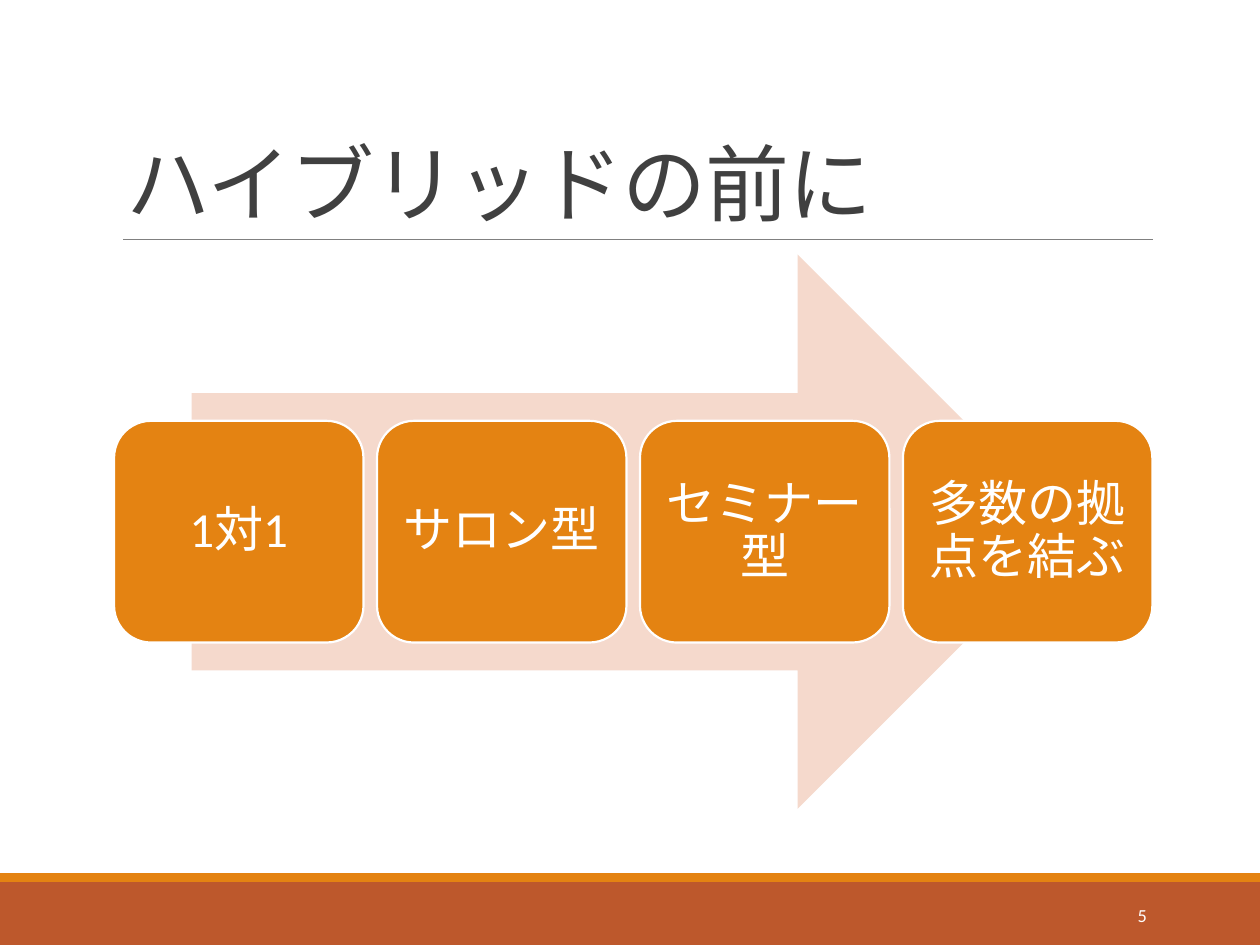
from pptx import Presentation
from pptx.dml.color import RGBColor
from pptx.enum.lang import MSO_LANGUAGE_ID as LANG
from pptx.enum.shapes import MSO_CONNECTOR, MSO_SHAPE as SHAPE
from pptx.enum.text import MSO_ANCHOR as ANCHOR, MSO_AUTO_SIZE, PP_ALIGN as ALIGN
from pptx.oxml.ns import qn
from pptx.util import Inches, Pt
from lxml import etree

WHITE = RGBColor(0xFF, 0xFF, 0xFF)
DARK = RGBColor(0x40, 0x40, 0x40)
GRAY = RGBColor(0x80, 0x80, 0x80)
ORANGE = RGBColor(0xE4, 0x83, 0x12)
RUST = RGBColor(0xBD, 0x58, 0x2C)
PALE = RGBColor(0xF5, 0xD9, 0xCC)

COLS, ROWS = 100, 75
STAGES = ["1対1", "サロン型", "セミナー型", "多数の拠点を結ぶ"]


def write(sp, text, size, color=WHITE, align=ALIGN.LEFT, anchor=ANCHOR.MIDDLE,
          leading=1.0, inset=None, spacing=None, font="Calibri"):
    tf = sp.text_frame
    tf.word_wrap = True
    tf.auto_size = MSO_AUTO_SIZE.NONE
    tf.vertical_anchor = anchor
    if inset is not None:
        tf.margin_left = tf.margin_right = Inches(inset)
        tf.margin_top = tf.margin_bottom = Inches(inset)
    p = tf.paragraphs[0]
    p.alignment = align
    p.line_spacing = leading
    r = p.add_run()
    r.text = text
    r.font.name = font
    r.font.size = Pt(size)
    r.font.color.rgb = color
    r.font.language_id = LANG.JAPANESE
    if spacing is not None:
        r.font._element.set("spc", str(int(spacing * 100)))


class Deck:
    """Draws styled elements on the current slide, placed by grid columns and rows."""

    def __init__(self):
        self.prs = Presentation()
        self.prs.slide_width, self.prs.slide_height = Inches(10), Inches(7.5)
        self.s = self.prs.slides.add_slide(self.prs.slide_layouts[5])

    def place(self, col, row, width, height):
        x, y = self.prs.slide_width / COLS, self.prs.slide_height / ROWS
        return int(col * x), int(row * y), int(width * x), int(height * y)

    def title(self, text, *box, **style):
        sp = self.s.shapes.title
        sp.left, sp.top, sp.width, sp.height = self.place(*box)
        write(sp, text, **style)

    def shape(self, kind, *box, fill, line=None):
        sp = self.s.shapes.add_shape(kind, *self.place(*box))
        sp.shadow.inherit = False
        sp.fill.solid()
        sp.fill.fore_color.rgb = fill
        if line is None:
            sp.line.fill.background()
        else:
            sp.line.color.rgb = line
            sp.line.width = Pt(1.25)
        return sp

    def rule(self, col, row, width, color):
        x, y, w, _ = self.place(col, row, width, 0)
        ln = self.s.shapes.add_connector(MSO_CONNECTOR.STRAIGHT, x, y, x + w, y)
        ln.line.color.rgb = color
        ln.line.width = Pt(0.5)
        etree.SubElement(ln._element.spPr, qn("a:effectLst"))

    def text(self, text, *box, **style):
        write(self.s.shapes.add_textbox(*self.place(*box)), text, **style)


def main():
    deck = Deck()
    deck.shape(SHAPE.RECTANGLE, 0, 70, COLS, 5, fill=RUST)
    deck.shape(SHAPE.RECTANGLE, 0, 69.3, COLS, 0.7, fill=ORANGE)
    deck.rule(9.8, 19, 81.7, GRAY)
    deck.title("ハイブリッドの前に", 9, 3.1, 82.5, 15.9, size=48, color=DARK,
               anchor=ANCHOR.BOTTOM, leading=0.85, spacing=-0.5)
    deck.shape(SHAPE.RIGHT_ARROW, 15.2, 20.2, 70.1, 44, fill=PALE)
    for i, stage in enumerate(STAGES):
        box = deck.shape(SHAPE.ROUNDED_RECTANGLE, 9.05 + i * 20.87, 33.4, 19.8, 17.6,
                         fill=ORANGE, line=WHITE)
        write(box, stage, size=28, align=ALIGN.CENTER, leading=0.9, inset=0.12)
    deck.text("5", 81.2, 70.6, 10.8, 4, size=10.5, align=ALIGN.RIGHT)
    deck.prs.save("out.pptx")


if __name__ == "__main__":
    main()
